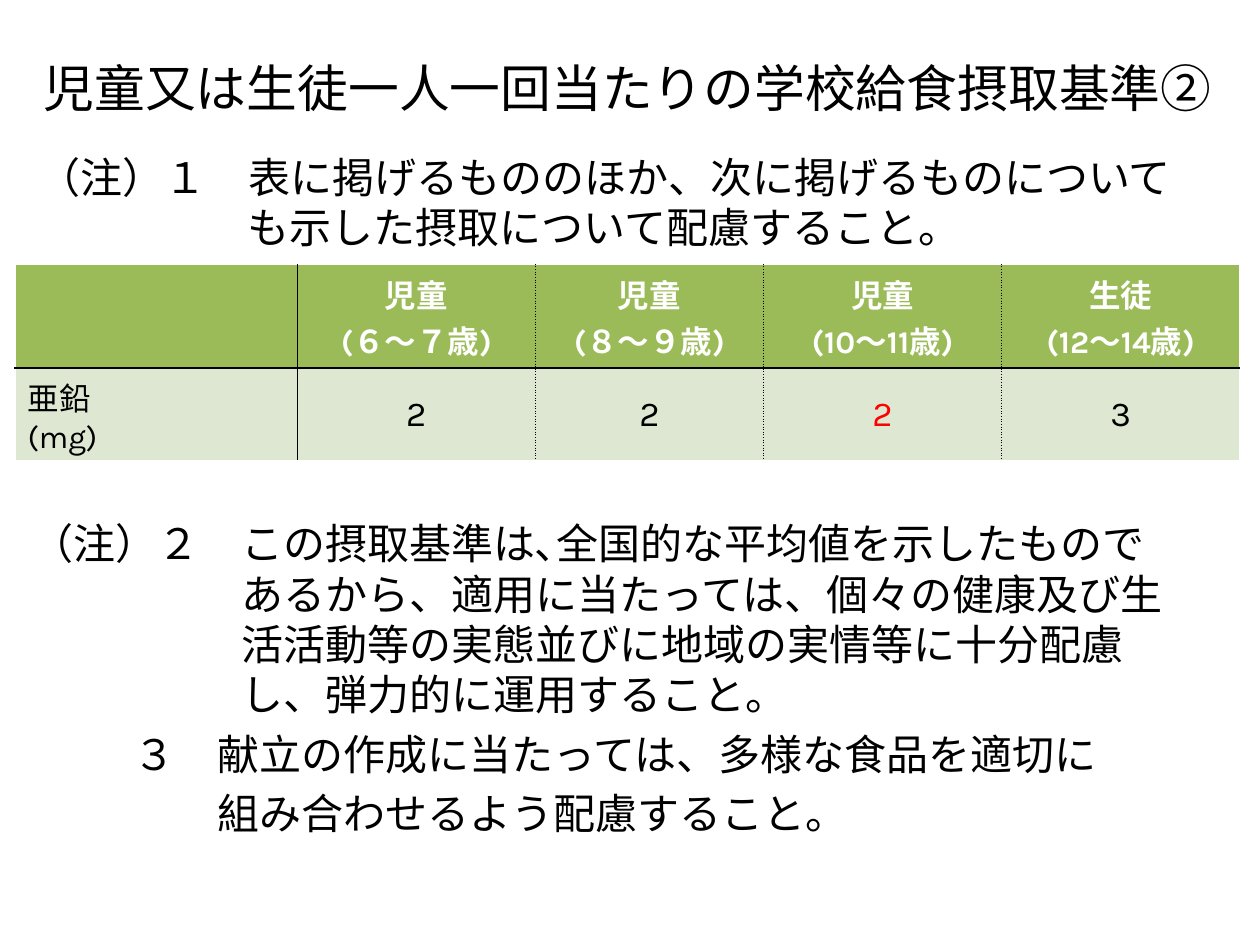
import pptx
import pptx.util
import pptx.dml.color
import pptx.enum.text
import pptx.oxml
import pptx.oxml.ns

Inches = pptx.util.Inches
Pt = pptx.util.Pt
ALIGN = pptx.enum.text.PP_ALIGN
ANCHOR = pptx.enum.text.MSO_ANCHOR

HUES = {"ink": "000000", "white": "FFFFFF", "red": "FF0000",
        "head": "9BBB59", "body": "DEE7D1"}
COLS = [2.24, 1.89, 1.81, 1.89, 1.89]
ROWS = [0.82, 0.74]
HEADS = ["", "児童\n(６～７歳)", "児童\n(８～９歳)", "児童\n(10～11歳)", "生徒\n(12～14歳)"]
ZINC = ["亜鉛\v(mg)", "2", "2", "2", "3"]
NOTE1 = "（注）１　表に掲げるもののほか、次に掲げるものについて\vも示した摂取について配慮すること。"
NOTE2 = ("（注）２　この摂取基準は､全国的な平均値を示したもので\v"
         "あるから、適用に当たっては、個々の健康及び生\v"
         "活活動等の実態並びに地域の実情等に十分配慮\v"
         "し、弾力的に運用すること。")
NOTE3 = ["３　献立の作成に当たっては、多様な食品を適切に", "組み合わせるよう配慮すること。"]


def rgb(name):
    return pptx.dml.color.RGBColor.from_string(HUES[name])


def write(para, text, size=24, font="Karla", hue="ink", bold=False,
          align=ALIGN.LEFT, before=0, left=0, first=0):
    """Fill a paragraph; left is its margin, first the indent of line one."""
    para.text = text
    para.alignment = align
    para.space_before = Pt(before)
    props = para._p.get_or_add_pPr()
    props.set("marL", str(Inches(left)))
    props.set("indent", str(Inches(first)))
    for run in para.runs:
        run.font.size = Pt(size)
        run.font.name = font
        run.font.bold = bold
        run.font.color.rgb = rgb(hue)


def add_box(slide, left, top, width, height, anchor=ANCHOR.TOP):
    box = slide.shapes.add_textbox(Inches(left), Inches(top), Inches(width), Inches(height))
    frame = box.text_frame
    frame.word_wrap = True
    frame.vertical_anchor = anchor
    return frame


def add_edge(cell, side, hue, dash):
    line = pptx.oxml.parse_xml(
        f'<a:ln{side} {pptx.oxml.ns.nsdecls("a")} w="{Pt(1)}"><a:solidFill>'
        f'<a:srgbClr val="{HUES[hue]}"/></a:solidFill>'
        f'<a:prstDash val="{dash}"/></a:ln{side}>')
    cell._tc.get_or_add_tcPr().append(line)


def style_cell(cell, row, col):
    """Rule the cell: white outside, solid after the labels, dotted between ages."""
    last = len(COLS) - 1

    def rule(pos):
        if pos in (0, last + 1):
            return "white", "solid"
        return "ink", "solid" if pos == 1 else "sysDot"

    add_edge(cell, "L", *rule(col))
    add_edge(cell, "R", *rule(col + 1))
    add_edge(cell, "T", "ink" if row else "white", "solid")
    add_edge(cell, "B", "white" if row else "ink", "solid")
    cell.fill.solid()
    cell.fill.fore_color.rgb = rgb("body" if row else "head")


def add_grid(slide):
    shape = slide.shapes.add_table(len(ROWS), len(COLS), Inches(0.12), Inches(2.1),
                                   Inches(sum(COLS)), Inches(sum(ROWS)))
    grid = shape.table
    for col, width in zip(grid.columns, COLS):
        col.width = Inches(width)
    for row, height in zip(grid.rows, ROWS):
        row.height = Inches(height)
    for col, (head, value) in enumerate(zip(HEADS, ZINC)):
        top, low = grid.cell(0, col), grid.cell(1, col)
        style_cell(top, 0, col)
        style_cell(low, 1, col)
        frame = top.text_frame
        for i, line in enumerate(head.split("\n")):
            para = frame.add_paragraph() if i else frame.paragraphs[0]
            write(para, line, size=18, hue="white", bold=True, align=ALIGN.CENTER)
        para = low.text_frame.paragraphs[0]
        if col:
            low.vertical_anchor = ANCHOR.MIDDLE
            write(para, value, size=20, hue="red" if col == 3 else "ink", align=ALIGN.CENTER)
        else:
            write(para, value, size=18)


def main():
    deck = pptx.Presentation()
    deck.slide_width, deck.slide_height = Inches(10), Inches(7.5)
    slide = deck.slides.add_slide(deck.slide_layouts[6])

    note = add_box(slide, 0.21, 1.15, 9.61, 0.87)
    write(note.paragraphs[0], NOTE1, before=5, left=1.66, first=-1.66)
    title = add_box(slide, 0.18, 0.29, 9.61, 0.81, ANCHOR.MIDDLE)
    write(title.paragraphs[0], "児童又は生徒一人一回当たりの学校給食摂取基準②",
          size=29, font="Arial", align=ALIGN.CENTER)
    add_grid(slide)
    rest = add_box(slide, 0.15, 4.06, 9.61, 2.6)
    write(rest.paragraphs[0], NOTE2, before=5, left=1.67, first=-1.67)
    for line, first in zip(NOTE3, (-0.67, 0)):
        write(rest.add_paragraph(), line, before=5, left=1.48, first=first)

    deck.save("out.pptx")


if __name__ == "__main__":
    main()
